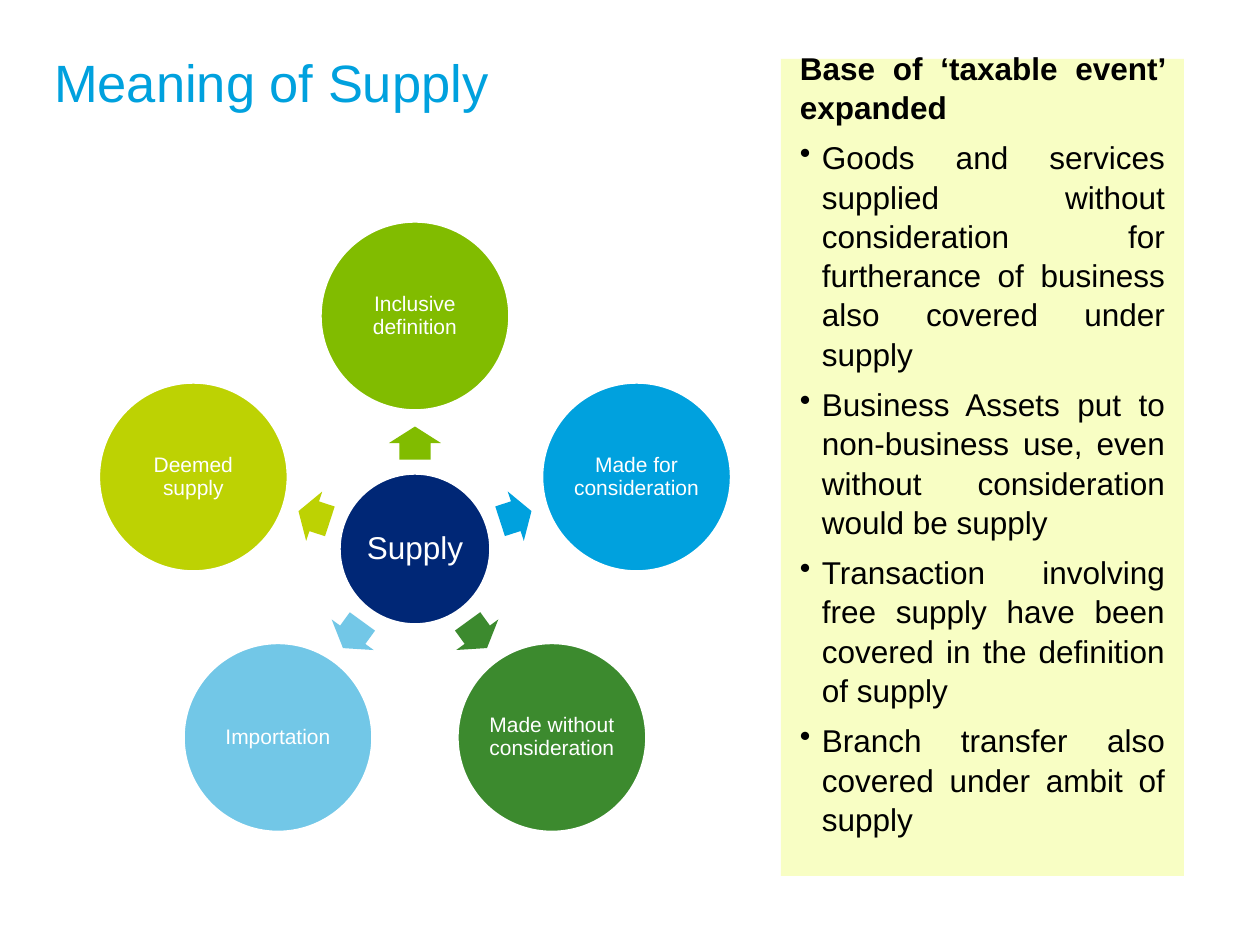
"""Build the slide on the meaning of supply."""
import math

import lxml.etree
import pptx
import pptx.dml.color
import pptx.enum.shapes
import pptx.enum.text
import pptx.oxml.ns
import pptx.util

SHAPE = pptx.enum.shapes.MSO_SHAPE
ALIGN = pptx.enum.text.PP_ALIGN
ANCHOR = pptx.enum.text.MSO_ANCHOR


def px(length):
    """Turn pixels into EMU."""
    return pptx.util.Emu(round(length * 914400 / 126))


def colour(code):
    """Turn a hex string into a colour."""
    return pptx.dml.color.RGBColor.from_string(code)


def assign(target, values):
    """Set every attribute named in a dict."""
    for name, value in values.items():
        setattr(target, name, value)


class SlideBuilder:
    """Hold the shared style and the slide being built."""

    font_name = "Arial"
    outline = "FFFFFF"
    bullet_indent = 22

    def __init__(self, slide):
        """Keep the slide to draw on."""
        self.slide = slide

    def shape(self, preset, box, fill, outlined=False):
        """Add a flat filled preset shape."""
        shape = self.slide.shapes.add_shape(preset, *map(px, box))
        shape.shadow.inherit = False
        shape.fill.solid()
        shape.fill.fore_color.rgb = colour(fill)
        if outlined:
            shape.line.color.rgb = colour(self.outline)
            shape.line.width = pptx.util.Pt(2)
        else:
            shape.line.fill.background()
        return shape

    def frame(self, shape, anchor, left, top, right, bottom):
        """Set up wrapping, anchor and insets of a text frame."""
        frame = shape.text_frame
        assign(frame, {
            "word_wrap": True, "vertical_anchor": anchor,
            "margin_left": px(left), "margin_top": px(top),
            "margin_right": px(right), "margin_bottom": px(bottom),
        })
        return frame

    def text(self, paragraph, wording, size, ink, bold=False, **layout):
        """Put one styled run into a paragraph."""
        assign(paragraph, layout)
        run = paragraph.add_run()
        run.text = wording
        assign(run.font, {"name": self.font_name, "size": pptx.util.Pt(size), "bold": bold})
        run.font.color.rgb = colour(ink)

    def bullet(self, paragraph):
        """Give a paragraph a hanging bullet."""
        properties = paragraph._p.get_or_add_pPr()
        indent = px(self.bullet_indent)
        properties.set("marL", str(indent))
        properties.set("indent", str(-indent))
        mark = lxml.etree.SubElement(properties, pptx.oxml.ns.qn("a:buChar"))
        mark.set("char", "•")

    def circle(self, centre, diameter, fill, label, size, inset):
        """Add a labelled circle around a centre point."""
        left, top = (middle - diameter / 2 for middle in centre)
        circle = self.shape(SHAPE.OVAL, (left, top, diameter, diameter), fill, True)
        frame = self.frame(circle, ANCHOR.MIDDLE, inset, inset, inset, inset)
        self.text(frame.paragraphs[0], label, size, "FFFFFF",
                  alignment=ALIGN.CENTER, line_spacing=0.9)

    def arrow(self, centre, angle, fill):
        """Add a block arrow pointing along an angle."""
        width, height = 33, 52
        box = (centre[0] - width / 2, centre[1] - height / 2, width, height)
        arrow = self.shape(SHAPE.RIGHT_ARROW, box, fill)
        arrow.rotation = angle
        arrow.adjustments[0], arrow.adjustments[1] = 0.6, 0.5

    def radial(self, hub, centre, branches):
        """Add a hub with evenly spaced branches, clockwise from the top."""
        self.circle(centre, 152, "002776", hub, 18, 4)
        for index, (label, fill) in enumerate(branches):
            angle = (270 + index * 360 / len(branches)) % 360
            direction = math.cos(math.radians(angle)), math.sin(math.radians(angle))
            arrow_at, branch_at = (
                [start + reach * step for start, step in zip(centre, direction)]
                for reach in (106, 233)
            )
            self.arrow(arrow_at, angle, fill)
            self.circle(branch_at, 190, fill, label, 12, 2)

    def panel(self, box, heading, points):
        """Add the side panel with a heading and bullets."""
        panel = self.shape(SHAPE.RECTANGLE, box, "F8FEC4")
        frame = self.frame(panel, ANCHOR.MIDDLE, 19, 4, 19, 54)
        layout = {"alignment": ALIGN.JUSTIFY, "line_spacing": 1.04,
                  "space_after": pptx.util.Pt(6.3)}
        self.text(frame.paragraphs[0], heading, 18, "000000", True, **layout)
        for point in points:
            paragraph = frame.add_paragraph()
            self.text(paragraph, point, 18, "000000", **layout)
            self.bullet(paragraph)

    def title(self, box, wording):
        """Add the slide title."""
        title = self.slide.shapes.add_textbox(*map(px, box))
        frame = self.frame(title, ANCHOR.TOP, 0, 5, 0, 0)
        self.text(frame.paragraphs[0], wording, 30, "00A1DE")


def main():
    """Build and save the presentation."""
    deck = pptx.Presentation()
    assign(deck, {"slide_width": px(1260), "slide_height": px(945)})
    builder = SlideBuilder(deck.slides.add_slide(deck.slide_layouts[6]))
    builder.radial("Supply", (415, 549), [
        ("Inclusive definition", "81BC00"),
        ("Made for consideration", "00A1DE"),
        ("Made without consideration", "3C8A2E"),
        ("Importation", "72C7E7"),
        ("Deemed supply", "BDD203"),
    ])
    builder.panel((781, 59, 403, 817), "Base of ‘taxable event’ expanded", [
        "Goods and services supplied without consideration for furtherance of "
        "business also covered under supply",
        "Business Assets put to non-business use, even without consideration "
        "would be supply",
        "Transaction involving free supply have been covered in the definition "
        "of supply",
        "Branch transfer also covered under ambit of supply",
    ])
    builder.title((54, 45, 1155, 136), "Meaning of Supply")
    deck.save("out.pptx")


if __name__ == "__main__":
    main()
